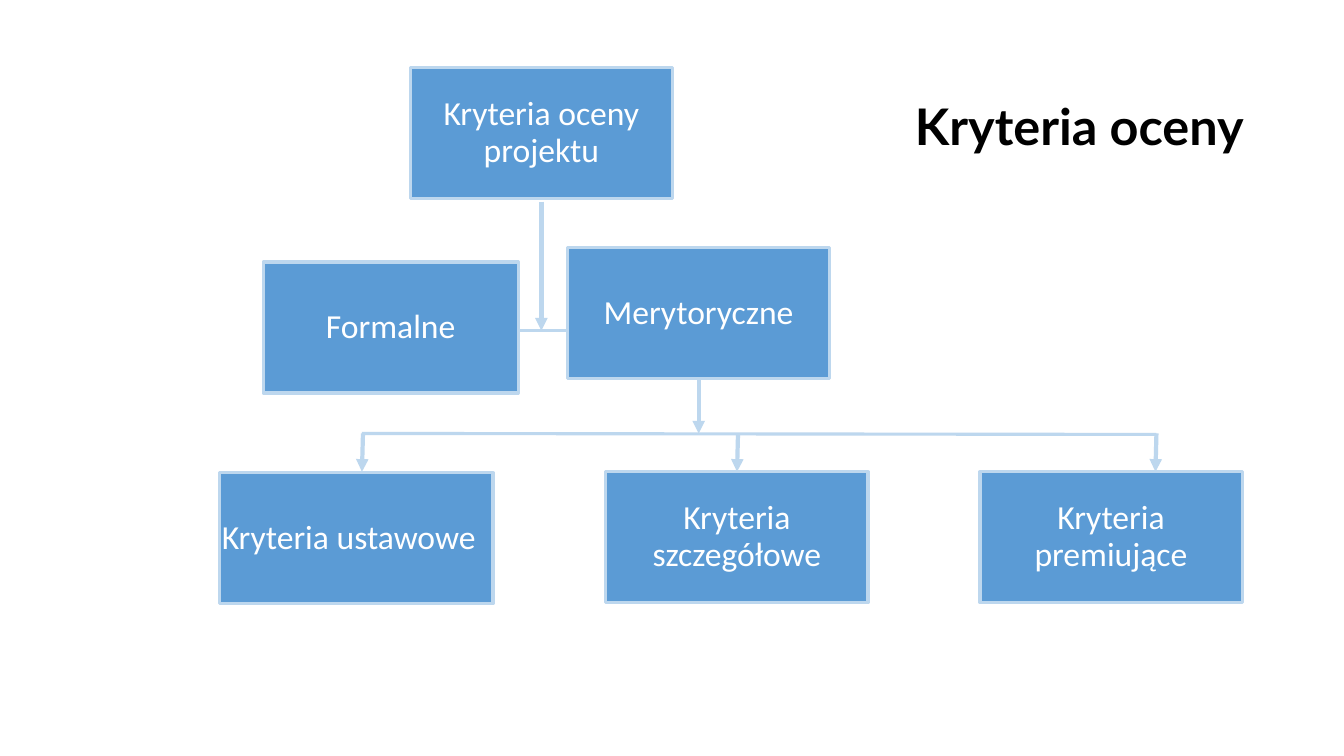
from dataclasses import dataclass

from lxml.etree import SubElement
from pptx import Presentation
from pptx.dml.color import RGBColor
from pptx.enum.shapes import MSO_CONNECTOR, MSO_SHAPE
from pptx.enum.text import MSO_ANCHOR, MSO_AUTO_SIZE, PP_ALIGN
from pptx.oxml.ns import qn
from pptx.util import Inches, Pt


@dataclass(frozen=True)
class Theme:
    box_fill: RGBColor = RGBColor(0x5B, 0x9B, 0xD5)
    line: RGBColor = RGBColor(0xBD, 0xD7, 0xEE)
    box_text: RGBColor = RGBColor(0xFF, 0xFF, 0xFF)
    title_text: RGBColor = RGBColor(0x00, 0x00, 0x00)
    box_font: str = "Calibri"
    title_font: str = "Lato"
    box_size: float = 24
    title_size: float = 36
    line_width: float = 2.25
    arrow_width: float = 3


def write_text(shape, text, *, font, size, color, bold=False, align=PP_ALIGN.CENTER,
               anchor=MSO_ANCHOR.MIDDLE, spacing=0.9, margin=None):
    frame = shape.text_frame
    frame.word_wrap = True
    frame.auto_size = MSO_AUTO_SIZE.NONE
    frame.vertical_anchor = anchor
    if margin is not None:
        frame.margin_left = frame.margin_right = Inches(margin)
        frame.margin_top = frame.margin_bottom = Inches(margin)
    paragraph = frame.paragraphs[0]
    paragraph.alignment = align
    paragraph.line_spacing = spacing
    run = paragraph.add_run()
    run.text = text
    run.font.name = font
    run.font.size = Pt(size)
    run.font.bold = bold
    run.font.color.rgb = color


class DiagramSlide:
    def __init__(self, presentation, theme):
        self.theme = theme
        self.slide = presentation.slides.add_slide(presentation.slide_layouts[5])

    def title(self, text, left, top, width, height):
        title = self.slide.shapes.title
        title.left, title.top = Inches(left), Inches(top)
        title.width, title.height = Inches(width), Inches(height)
        write_text(title, text, font=self.theme.title_font, size=self.theme.title_size,
                   color=self.theme.title_text, bold=True, anchor=MSO_ANCHOR.TOP, spacing=1.5)

    def box(self, text, left, top, width=2.6, height=1.3, align=PP_ALIGN.CENTER):
        box = self.slide.shapes.add_shape(MSO_SHAPE.RECTANGLE, Inches(left), Inches(top),
                                          Inches(width), Inches(height))
        box.shadow.inherit = False
        box.fill.solid()
        box.fill.fore_color.rgb = self.theme.box_fill
        box.line.color.rgb = self.theme.line
        box.line.width = Pt(self.theme.line_width)
        write_text(box, text, font=self.theme.box_font, size=self.theme.box_size,
                   color=self.theme.box_text, align=align, margin=0.02)

    def line(self, start, end, arrow=False):
        connector = self.slide.shapes.add_connector(
            MSO_CONNECTOR.STRAIGHT, *(Inches(value) for value in (*start, *end)))
        connector.line.color.rgb = self.theme.line
        connector.line.width = Pt(self.theme.arrow_width if arrow else self.theme.line_width)
        properties = connector._element.spPr
        if arrow:
            SubElement(properties.find(qn("a:ln")), qn("a:tailEnd"), type="triangle")
        SubElement(properties, qn("a:effectLst"))


def main():
    presentation = Presentation()
    presentation.slide_width = Inches(13.33)
    presentation.slide_height = Inches(7.5)
    diagram = DiagramSlide(presentation, Theme())

    diagram.title("Kryteria oceny", 7.37, 0.59, 6.67, 1.81)

    diagram.box("Kryteria oceny projektu", 4.07, 0.67)
    diagram.box("Formalne", 2.61, 2.6, width=2.53)
    diagram.box("Merytoryczne", 5.63, 2.46)
    diagram.box("Kryteria ustawowe", 2.18, 4.69, width=2.71, align=PP_ALIGN.LEFT)
    diagram.box("Kryteria szczegółowe", 6.01, 4.68)
    diagram.box("Kryteria premiujące", 9.72, 4.68)

    diagram.line((5.37, 2), (5.37, 3.28), arrow=True)
    diagram.line((5.14, 3.28), (5.63, 3.28))
    diagram.line((6.93, 3.76), (6.93, 4.3), arrow=True)
    diagram.line((3.59, 4.3), (11.47, 4.31))
    for branch in (3.6, 7.32, 11.47):
        diagram.line((branch, 4.3), (branch - 0.01, 4.68), arrow=True)

    presentation.save("out.pptx")


if __name__ == "__main__":
    main()
